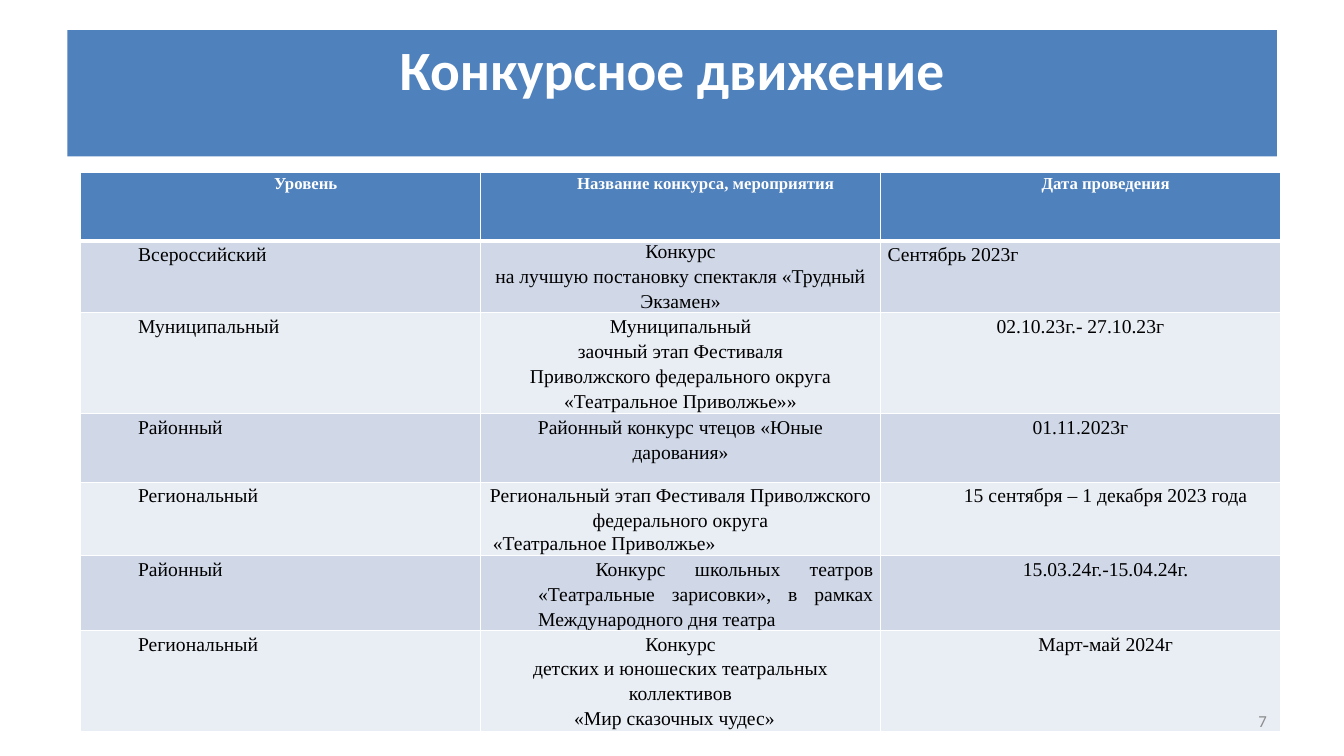
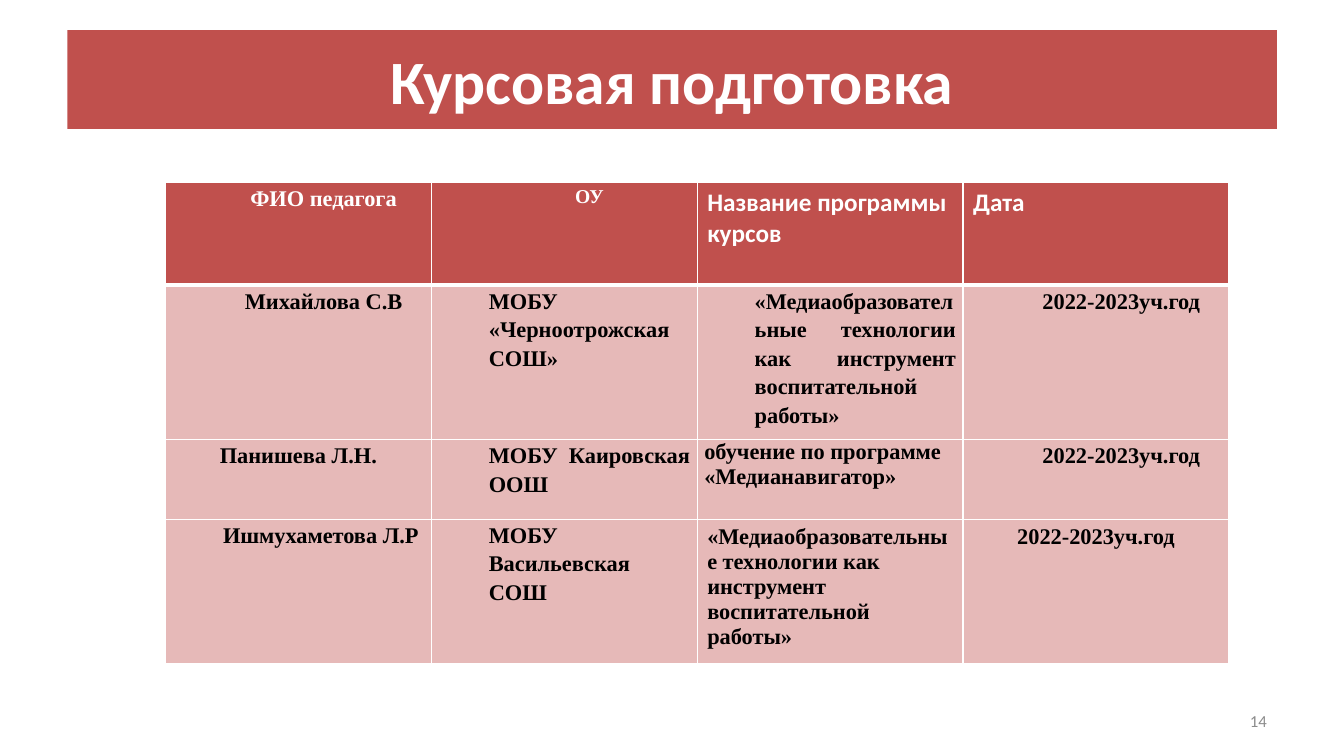
import pptx
import pptx.util
import pptx.dml.color
import pptx.enum.shapes
import pptx.enum.text
import pptx.oxml.ns
import lxml.etree

Cm = pptx.util.Cm
Pt = pptx.util.Pt
ALIGN = pptx.enum.text.PP_ALIGN
ANCHOR = pptx.enum.text.MSO_ANCHOR
qn = pptx.oxml.ns.qn

WHITE, BLACK, GREY = "FFFFFF", "000000", "8C8C8C"
BLUE, RED = "4F81BD", "C0504D"
SERIF, SANS = "Times New Roman", "Calibri"
NARROW = {"margin_left": Cm(0.18), "margin_right": Cm(0.18), "margin_top": 0, "margin_bottom": 0}
STEP = Cm(1.27)

CENTER = {"alignment": ALIGN.CENTER, "line_spacing": 1.15}
JUSTIFY = {"alignment": ALIGN.JUSTIFY, "line_spacing": 1.15}
LEFT = {"alignment": ALIGN.LEFT, "line_spacing": 1.15}
STYLES = {
    "center": {"para": CENTER},
    "center_in": {"para": CENTER, "marL": STEP},
    "center_in_small": {"para": CENTER, "marL": STEP, "font": {"size": Pt(14)}},
    "center_exact": {"para": {**CENTER, "line_spacing": Pt(15.8)}},
    "justify_in": {"para": JUSTIFY, "marL": STEP},
    "justify_first": {"para": JUSTIFY, "marL": STEP, "indent": Cm(1.45)},
    "justify_deep": {"para": JUSTIFY, "marL": Cm(2.18)},
    "left": {"para": LEFT},
    "left_close": {"para": {**LEFT, "line_spacing": 1.06}, "marL": Cm(0.13)},
    "left_single": {"para": {"alignment": ALIGN.LEFT}},
    "roomy": {"para": {"alignment": ALIGN.LEFT}, "margins": {}},
    "roomy_center": {"para": {"alignment": ALIGN.CENTER}, "margins": {}},
    "roomy_sans": {"para": {"alignment": ALIGN.LEFT}, "margins": {},
                   "font": {"size": Pt(18), "name": SANS}},
}

SLIDES = [
    {
        "title": "Конкурсное движение", "color": BLUE, "number": "7",
        "title_height": 3.18, "title_size": 39.6, "title_anchor": ANCHOR.TOP,
        "left": 2.03, "top": 4.34, "col_width": 10.08,
        "row_heights": [1.73, 1.78, 2.54, 1.73, 1.85, 1.88, 2.54],
        "bands": ["D0D8E8", "E9EDF4"],
        "header_size": 12, "body_size": 14, "body_bold": False,
        "rows": [
            [[("center_in", "Уровень")],
             [("center_in", "Название конкурса, мероприятия")],
             [("center_in", "Дата проведения")]],
            [[("justify_in", "Всероссийский")],
             [("center_exact", "Конкурс"),
              ("center", "на лучшую постановку спектакля «Трудный Экзамен»")],
             [("left", "Сентябрь 2023г")]],
            [[("justify_in", "Муниципальный")],
             [("center", "Муниципальный"),
              ("center", "заочный этап Фестиваля"),
              ("center", "Приволжского федерального округа"),
              ("center", "«Театральное Приволжье»»")],
             [("center", "02.10.23г.- 27.10.23г")]],
            [[("justify_in", "Районный")],
             [("center", "Районный конкурс чтецов «Юные дарования»")],
             [("center", "01.11.2023г")]],
            [[("justify_in", "Региональный")],
             [("center", "Региональный этап Фестиваля Приволжского федерального округа"),
              ("left_close", "«Театральное Приволжье»")],
             [("center_in", "15 сентября – 1 декабря 2023 года")]],
            [[("justify_in", "Районный")],
             [("justify_first", "Конкурс школьных театров «Театральные зарисовки», "
                                "в рамках Международного дня театра")],
             [("center_in", "15.03.24г.-15.04.24г.")]],
            [[("justify_in", "Региональный")],
             [("center", "Конкурс"),
              ("center", "детских и юношеских театральных коллективов"),
              ("justify_deep", "«Мир сказочных чудес»")],
             [("center_in", "Март-май 2024г")]],
        ],
    },
    {
        "title": "Курсовая подготовка", "color": RED, "number": "14",
        "title_height": 2.49, "title_size": 44, "title_anchor": ANCHOR.MIDDLE,
        "left": 4.17, "top": 4.6, "col_width": 6.7,
        "row_heights": [2.59, 3.73, 2.01, 3.38],
        "bands": ["E6B9B8"],
        "header_size": 16, "body_size": 16, "body_bold": True,
        "rows": [
            [[("center_in", "ФИО педагога")],
             [("center_in_small", "ОУ")],
             [("roomy_sans", "Название программы курсов")],
             [("roomy_sans", "Дата")]],
            [[("center_in", "Михайлова С.В")],
             [("justify_in", "МОБУ «Черноотрожская СОШ»")],
             [("justify_in", "«Медиаобразовательные технологии как инструмент "
                             "воспитательной работы»")],
             [("center_in", "2022-2023уч.год")]],
            [[("center", "Панишева Л.Н.")],
             [("justify_in", "МОБУ Каировская ООШ")],
             [("left_single", "обучение по программе «Медианавигатор»")],
             [("center_in", "2022-2023уч.год")]],
            [[("justify_in", "Ишмухаметова Л.Р")],
             [("justify_in", "МОБУ Васильевская СОШ")],
             [("roomy", "«Медиаобразовательные технологии как инструмент "
                        "воспитательной работы»")],
             [("roomy_center", "2022-2023уч.год")]],
        ],
    },
]


def rgb(value):
    return pptx.dml.color.RGBColor.from_string(value)


def write(p, text, color, font, para):
    for name, value in para.items():
        setattr(p, name, value)
    r = p.add_run()
    r.text = text
    for name, value in font.items():
        setattr(r.font, name, value)
    r.font.color.rgb = rgb(color)


prs = pptx.Presentation()
prs.slide_width, prs.slide_height = Cm(33.87), Cm(19.05)

for d in SLIDES:
    s = prs.slides.add_slide(prs.slide_layouts[6])

    sp = s.shapes.add_shape(pptx.enum.shapes.MSO_SHAPE.RECTANGLE,
                            Cm(1.7), Cm(0.76), Cm(30.48), Cm(d["title_height"]))
    sp.shadow.inherit = False
    sp.fill.solid()
    sp.fill.fore_color.rgb = rgb(d["color"])
    sp.line.fill.background()
    tf = sp.text_frame
    tf.word_wrap = True
    tf.vertical_anchor = d["title_anchor"]
    write(tf.paragraphs[0], d["title"], WHITE,
          {"size": Pt(d["title_size"]), "name": SANS, "bold": True},
          {"alignment": ALIGN.CENTER})

    rows, heights = d["rows"], d["row_heights"]
    cols = len(rows[0])
    table = s.shapes.add_table(len(rows), cols, Cm(d["left"]), Cm(d["top"]),
                               Cm(d["col_width"] * cols), Cm(sum(heights))).table
    for col in table.columns:
        col.width = Cm(d["col_width"])
    for i, row in enumerate(rows):
        table.rows[i].height = Cm(heights[i])
        head = i == 0
        fill = d["color"] if head else d["bands"][(i - 1) % len(d["bands"])]
        base = {"size": Pt(d["header_size"] if head else d["body_size"]),
                "name": SERIF, "bold": head or d["body_bold"]}
        for j, paras in enumerate(row):
            cell = table.cell(i, j)
            tcPr = cell._tc.get_or_add_tcPr()
            for side in "LRTB":
                thick = (i, side) in ((0, "B"), (1, "T"))
                ln = lxml.etree.SubElement(tcPr, qn("a:ln" + side), w=str(Pt(3 if thick else 1)))
                solid = lxml.etree.SubElement(ln, qn("a:solidFill"))
                lxml.etree.SubElement(solid, qn("a:srgbClr"), val=WHITE)
            cell.fill.solid()
            cell.fill.fore_color.rgb = rgb(fill)
            for name, value in STYLES[paras[0][0]].get("margins", NARROW).items():
                setattr(cell, name, value)
            tf = cell.text_frame
            for k, (key, text) in enumerate(paras):
                style = STYLES[key]
                p = tf.add_paragraph() if k else tf.paragraphs[0]
                write(p, text, WHITE if head else BLACK,
                      {**base, **style.get("font", {})}, style["para"])
                pPr = p._p.get_or_add_pPr()
                for name in ("marL", "indent"):
                    pPr.set(name, str(style.get(name, 0)))

    tf = s.shapes.add_textbox(Cm(24.28), Cm(17.65), Cm(7.9), Cm(1.02)).text_frame
    tf.word_wrap = True
    tf.vertical_anchor = ANCHOR.MIDDLE
    write(tf.paragraphs[0], d["number"], GREY, {"size": Pt(12), "name": SANS},
          {"alignment": ALIGN.RIGHT})

prs.save("out.pptx")
